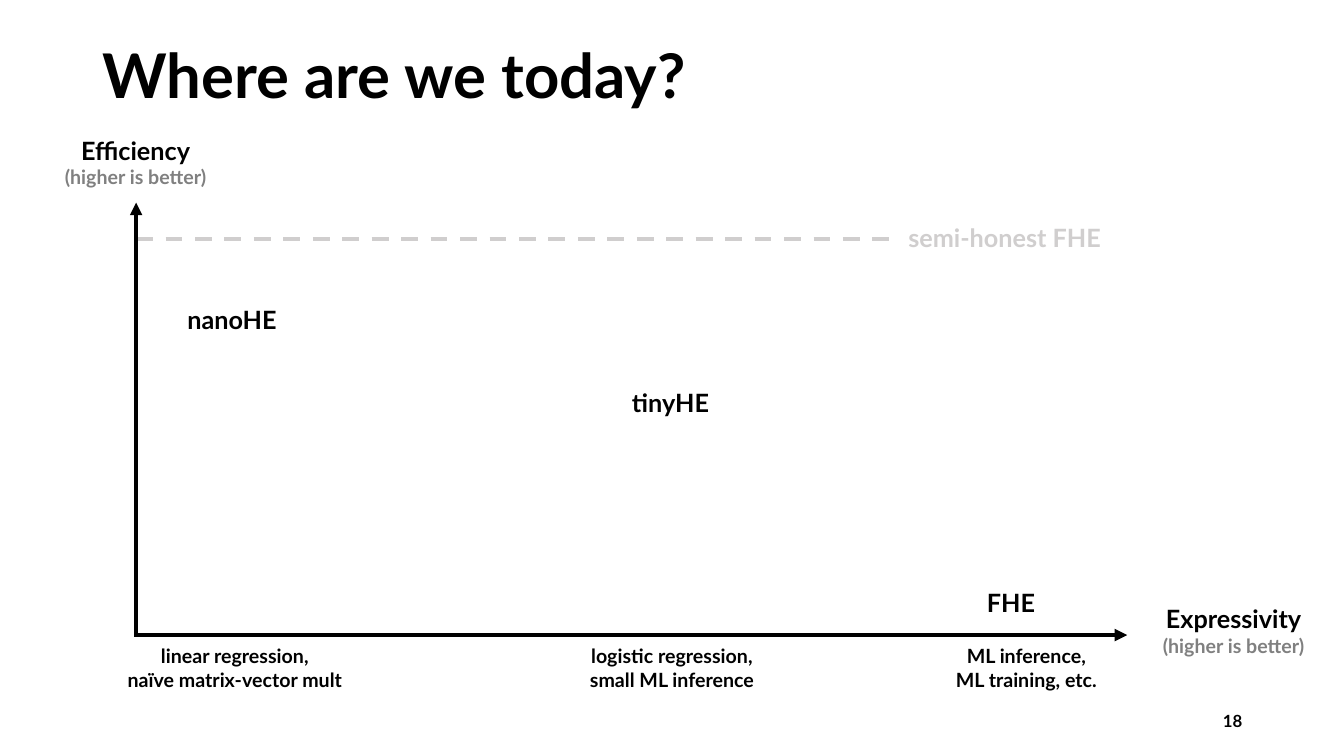
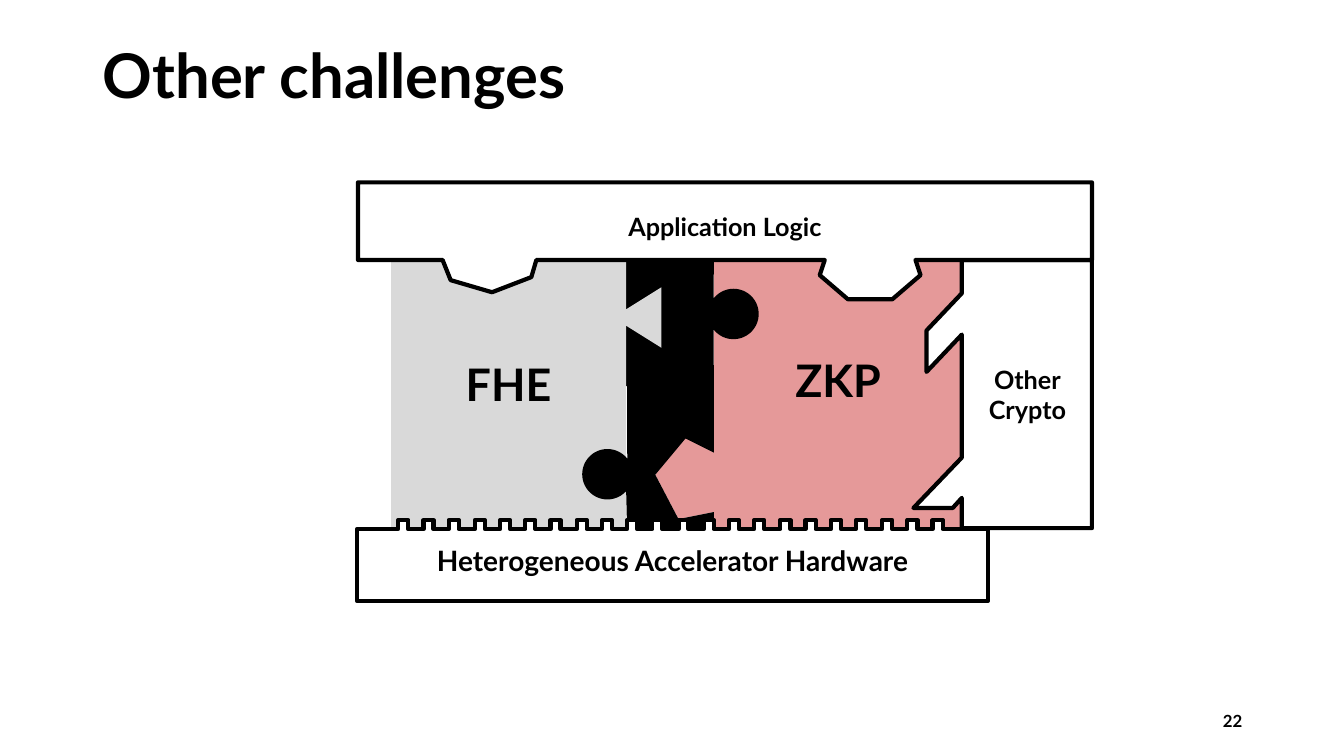
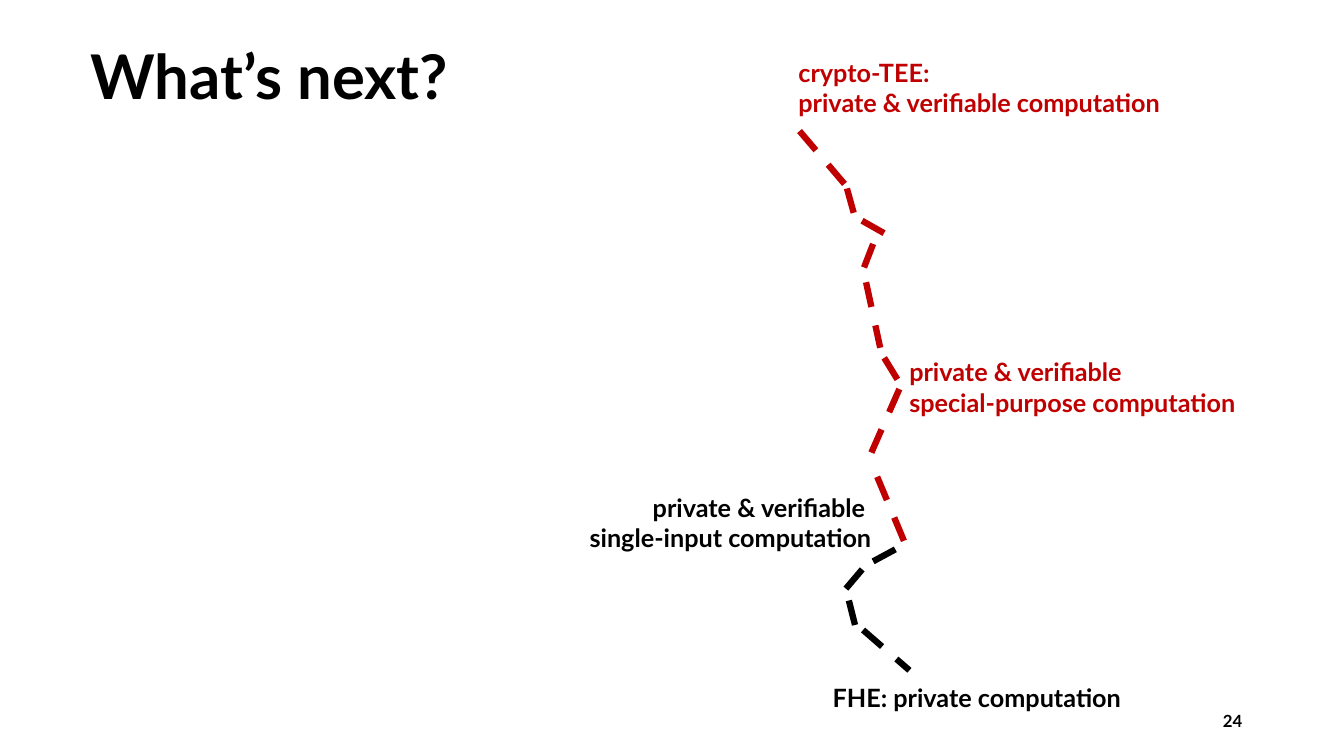
"""Build three slides on homomorphic encryption: status, challenges and roadmap."""
from math import cos, radians, sin

from pptx import Presentation
from pptx.dml.color import RGBColor
from pptx.enum.dml import MSO_LINE
from pptx.enum.shapes import MSO_CONNECTOR, MSO_SHAPE
from pptx.enum.text import MSO_ANCHOR, PP_ALIGN
from pptx.oxml.ns import qn
from pptx.util import Pt
from lxml.etree import SubElement

PX = 9144
FONT = "Lato"
COLORS = {
    "black": "000000", "white": "FFFFFF", "red": "C00000",
    "grey": "808080", "pale": "D0CECE", "silver": "D9D9D9",
}
LEFT, CENTER, RIGHT = PP_ALIGN.LEFT, PP_ALIGN.CENTER, PP_ALIGN.RIGHT
MARGINS = (10, 5, 10, 5)

AXES = [((135, 631), (135, 201)), ((133, 630), (1118, 630))]
BASELINE = ((135, 237), (1119, 237))
AXIS_TITLES = [
    ("Expressivity\n(higher is better)", (1136, 594, 175, 64)),
    ("Efficiency\n(higher is better)", (47, 129, 175, 64)),
]
SCHEMES = [
    ("nanoHE", (176, 297, 116, 40)),
    ("tinyHE", (617, 379, 100, 40)),
    ("FHE", (969, 578, 70, 40)),
]
USES_TOP, USES_HEIGHT = 634, 57
USES = [
    ("linear regression,\nnaïve matrix-vector mult", 108, 250),
    ("logistic regression,\nsmall ML inference", 567, 199),
    ("ML inference,\nML training, etc.", 932, 172),
]

ZKP_PIECE = [(708, 258), (953, 258), (953, 524), (708, 524), (708, 508),
             (673, 515), (650, 471), (680, 434), (708, 449)]
OTHER_CRYPTO = [(954, 258), (1083, 258), (1083, 524), (954, 524), (954, 494),
                (945, 504), (906, 504), (954, 454), (954, 332), (919, 369),
                (919, 328), (954, 291)]
APPLICATION = [(355, 181), (1083, 181), (1083, 258), (908, 258), (913, 273),
               (885, 297), (841, 297), (813, 273), (818, 258), (532, 258),
               (527, 275), (488, 290), (447, 278), (439, 258), (355, 258)]
TEETH, FIRST_TOOTH, LAST_TOOTH, TOOTH_WIDTH = 22, 395, 925, 10

RED_PATH = [
    ((793, 130), (844, 190)), ((866, 242), (854, 273)),
    ((859, 280), (873, 345)), ((840, 187), (850, 223)),
    ((855, 219), (878, 232)), ((877, 355), (899, 391)),
    ((892, 386), (859, 461)), ((870, 473), (898, 540)),
]
BLACK_PATH = [
    ((839, 584), (861, 558)), ((888, 545), (851, 565)),
    ((856, 625), (902, 665)), ((848, 620), (839, 584)),
]
MILESTONES = [
    ("private & verifiable \vsingle-input computation", (534, 483, 340, 71), "black", RIGHT),
    ("crypto-TEE:\nprivate & verifiable computation", (782, 52, 641, 71), "red", LEFT),
    ("private & verifiable\nspecial-purpose computation", (892, 349, 386, 71), "red", LEFT),
    ("FHE: private computation", (816, 672, 326, 40), "black", LEFT),
]


def rgb(name):
    return RGBColor.from_string(COLORS[name])


def scaled(values):
    return [round(value * PX) for value in values]


def style(paragraph, size, color):
    for run in paragraph.runs:
        run.font.name, run.font.bold = FONT, True
        run.font.size, run.font.color.rgb = Pt(size), rgb(color)


def write(shape, text, size=18, color="black", align=LEFT, anchor=MSO_ANCHOR.TOP,
          margins=MARGINS):
    frame = shape.text_frame
    frame.text = text
    frame.word_wrap, frame.vertical_anchor = True, anchor
    (frame.margin_left, frame.margin_top,
     frame.margin_right, frame.margin_bottom) = scaled(margins)
    for paragraph in frame.paragraphs:
        paragraph.alignment = align
        style(paragraph, size, color)
    return frame


def label(slide, text, box, **look):
    return write(slide.shapes.add_textbox(*scaled(box)), text, **look)


def paint(shape, fill, outlined=False):
    shape.shadow.inherit = False
    shape.fill.solid()
    shape.fill.fore_color.rgb = rgb(fill)
    if outlined:
        shape.line.color.rgb, shape.line.width = rgb("black"), Pt(3)
    else:
        shape.line.fill.background()
    return shape


def block(slide, preset, box, fill):
    return paint(slide.shapes.add_shape(preset, *scaled(box)), fill)


def piece(slide, points, fill, outlined=False):
    start, *rest = [scaled(point) for point in points]
    builder = slide.shapes.build_freeform(*start, scale=1.0)
    builder.add_line_segments(rest, close=True)
    return paint(builder.convert_to_shape(), fill, outlined)


def stroke(slide, ends, color, width, dashed=False, arrow=False):
    start, end = ends
    line = slide.shapes.add_connector(MSO_CONNECTOR.STRAIGHT, *scaled(start + end))
    line.line.color.rgb, line.line.width = rgb(color), Pt(width)
    if dashed:
        line.line.dash_style = MSO_LINE.DASH
    if arrow:
        SubElement(line.line._get_or_add_ln(), qn("a:tailEnd"), type="triangle")
    SubElement(line._element.spPr, qn("a:effectLst"))


def arc(x, y, radius, first, last):
    return [(x + radius * cos(radians(angle)), y + radius * sin(radians(angle)))
            for angle in range(first, last + 1, 4)]


def add_slide(deck, title, number, corner=(92, 40)):
    slide = deck.slides.add_slide(deck.slide_layouts[6])
    heading = label(slide, title, (*corner, 1150, 145), size=44)
    heading.paragraphs[0].line_spacing = 0.9
    label(slide, number, (942, 695, 300, 40), size=12, align=RIGHT, anchor=MSO_ANCHOR.MIDDLE)
    return slide


def build_status(deck):
    slide = add_slide(deck, "Where are we today?", "18")
    stroke(slide, BASELINE, "pale", 3, dashed=True)
    for axis in AXES:
        stroke(slide, axis, "black", 3, arrow=True)
    for text, box in AXIS_TITLES:
        frame = label(slide, text, box, align=CENTER)
        style(frame.paragraphs[1], 14, "grey")
    write(block(slide, MSO_SHAPE.RECTANGLE, (891, 216, 231, 40), "white"),
          "semi-honest FHE", color="pale")
    for text, box in SCHEMES:
        label(slide, text, box)
    for text, left, width in USES:
        label(slide, text, (left, USES_TOP, width, USES_HEIGHT), size=14, align=CENTER)


def build_challenges(deck):
    slide = add_slide(deck, "Other challenges", "22")
    centered = {"align": CENTER, "anchor": MSO_ANCHOR.MIDDLE}

    zkp = piece(slide, ZKP_PIECE, "red")
    tint = zkp._element.spPr.find(qn("a:solidFill"))[0]
    SubElement(tint, qn("a:alpha"), val="40000")

    upper_knob = arc(727.5, 311.5, 25, -142, 142)
    piece(slide, [(583, 258), (708, 258), *upper_knob, (708, 383), (583, 383)], "black")
    fhe = block(slide, MSO_SHAPE.RECTANGLE, (388, 258, 233, 266), "silver")
    write(fhe, "FHE", size=32, margins=(10, 5, 10, 25), **centered)
    label(slide, "ZKP", (779, 345, 110, 64), size=32)
    block(slide, MSO_SHAPE.ISOSCELES_TRIANGLE, (602, 291, 60, 48), "silver").rotation = 270

    lower_knob = arc(602.5, 470.5, 25, 42, 322)
    piece(slide, [(622, 383), (708, 383), (708, 449), (680, 435), (650, 471), (673, 515),
                  (708, 508), (708, 524), (622, 524), *lower_knob], "black")

    comb = []
    for index in range(TEETH):
        left = FIRST_TOOTH + round(index * (LAST_TOOTH - FIRST_TOOTH) / (TEETH - 1))
        right = left + TOOTH_WIDTH
        comb += [(left, 525), (left, 516), (right, 516), (right, 525)]
    hardware = piece(slide, [*comb, (980, 525), (980, 596), (354, 596), (354, 525)],
                     "white", outlined=True)
    write(hardware, "Heterogeneous Accelerator Hardware", size=20, **centered)
    write(piece(slide, OTHER_CRYPTO, "white", outlined=True), "Other\nCrypto",
          margins=(59, 5, 10, 5), **centered)
    write(piece(slide, APPLICATION, "white", outlined=True), "Application Logic",
          margins=(10, 5, 10, 34), **centered)


def build_roadmap(deck):
    slide = add_slide(deck, "What’s next?", "24", corner=(80, 41))
    for color, path_lines in (("red", RED_PATH), ("black", BLACK_PATH)):
        for ends in path_lines:
            stroke(slide, ends, color, 4.5, dashed=True)
    for text, box, color, align in MILESTONES:
        label(slide, text, box, color=color, align=align)


def main():
    deck = Presentation()
    deck.slide_width, deck.slide_height = scaled((1333, 750))
    build_status(deck)
    build_challenges(deck)
    build_roadmap(deck)
    deck.save("out.pptx")


if __name__ == "__main__":
    main()
